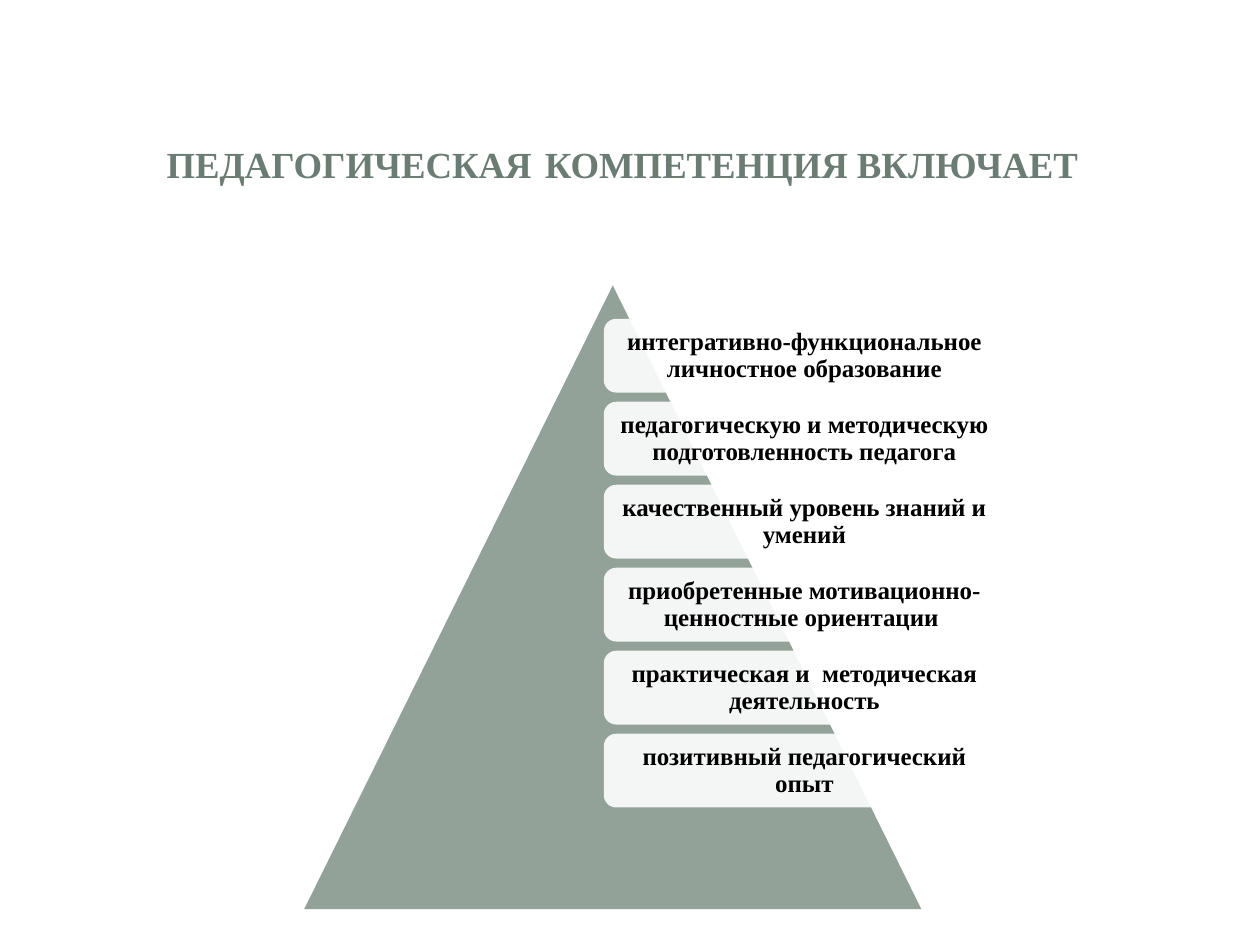
from pptx import Presentation
from pptx.dml.color import RGBColor
from pptx.enum.shapes import MSO_SHAPE
from pptx.enum.text import MSO_ANCHOR, MSO_AUTO_SIZE, PP_ALIGN
from pptx.oxml.ns import qn
from pptx.util import Pt
from lxml.etree import SubElement

SAGE = RGBColor(0x93, 0xA2, 0x99)
MOSS = RGBColor(0x6B, 0x7D, 0x72)
WHITE = RGBColor(0xFF, 0xFF, 0xFF)
BLACK = RGBColor(0, 0, 0)
FONT = "Times New Roman"

TITLE = [("ПЕДАГОГИЧЕСКАЯ", 28), ("  ", 20), ("КОМПЕТЕНЦИЯ ВКЛЮЧАЕТ ", 28)]
ITEMS = [
    "интегративно-функциональное личностное образование",
    "педагогическую и методическую подготовленность педагога",
    "качественный уровень знаний и умений",
    "приобретенные мотивационно-ценностные ориентации ",
    "практическая и  методическая деятельность",
    "позитивный педагогический опыт",
]


def write(shape, runs, color=BLACK, pad=(8.5, 8.5), spacing=1.0):
    """Write bold centred runs of (text, size) into a shape."""
    frame = shape.text_frame
    frame.word_wrap = True
    frame.auto_size = MSO_AUTO_SIZE.NONE
    frame.vertical_anchor = MSO_ANCHOR.MIDDLE
    frame.margin_left = frame.margin_right = Pt(pad[0])
    frame.margin_top = frame.margin_bottom = Pt(pad[1])
    para = frame.paragraphs[0]
    para.alignment = PP_ALIGN.CENTER
    para.line_spacing = spacing
    for text, size in runs:
        run = para.add_run()
        run.text = text
        run.font.name = FONT
        run.font.size = Pt(size)
        run.font.bold = True
        run.font.color.rgb = color


def draw(group, kind, left, top, width, height, fill, alpha=100):
    """Add a plain filled shape to a group, with opacity in percent."""
    shape = group.shapes.add_shape(kind, Pt(left), Pt(top), Pt(width), Pt(height))
    shape.shadow.inherit = False
    shape.fill.solid()
    shape.fill.fore_color.rgb = fill
    shape.line.fill.background()
    if alpha < 100:
        color = shape._element.spPr.find(qn("a:solidFill"))[0]
        SubElement(color, qn("a:alpha")).set("val", str(alpha * 1000))
    return shape


def head(slide, left, top, width, height):
    """Place the title in its box."""
    title = slide.shapes.title
    title.left, title.top = Pt(left), Pt(top)
    title.width, title.height = Pt(width), Pt(height)
    write(title, TITLE, color=MOSS, pad=(9.4, 5))


def pyramid(slide, left, top, width, height):
    """Draw the triangle and its evenly stacked cards in a box."""
    group = slide.shapes.add_group_shape()
    draw(group, MSO_SHAPE.ISOSCELES_TRIANGLE, left, top, width, height, SAGE)
    start = left + width / 2 - 6.8
    wide = width * 0.65
    tall = 56.2
    step = tall * 1.125
    for row, item in enumerate(ITEMS):
        card = draw(group, MSO_SHAPE.ROUNDED_RECTANGLE, start,
                    top + 25.4 + row * step, wide, tall, WHITE, alpha=90)
        write(card, [(item, 19)], spacing=0.9)


def main():
    """Build and save the slide."""
    deck = Presentation()
    deck.slide_width, deck.slide_height = Pt(960), Pt(720)
    slide = deck.slides.add_slide(deck.slide_layouts[5])
    head(slide, 95, 82, 765, 85)
    pyramid(slide, 231.8, 217.5, 470.2, 475.2)
    deck.save("out.pptx")


if __name__ == "__main__":
    main()
